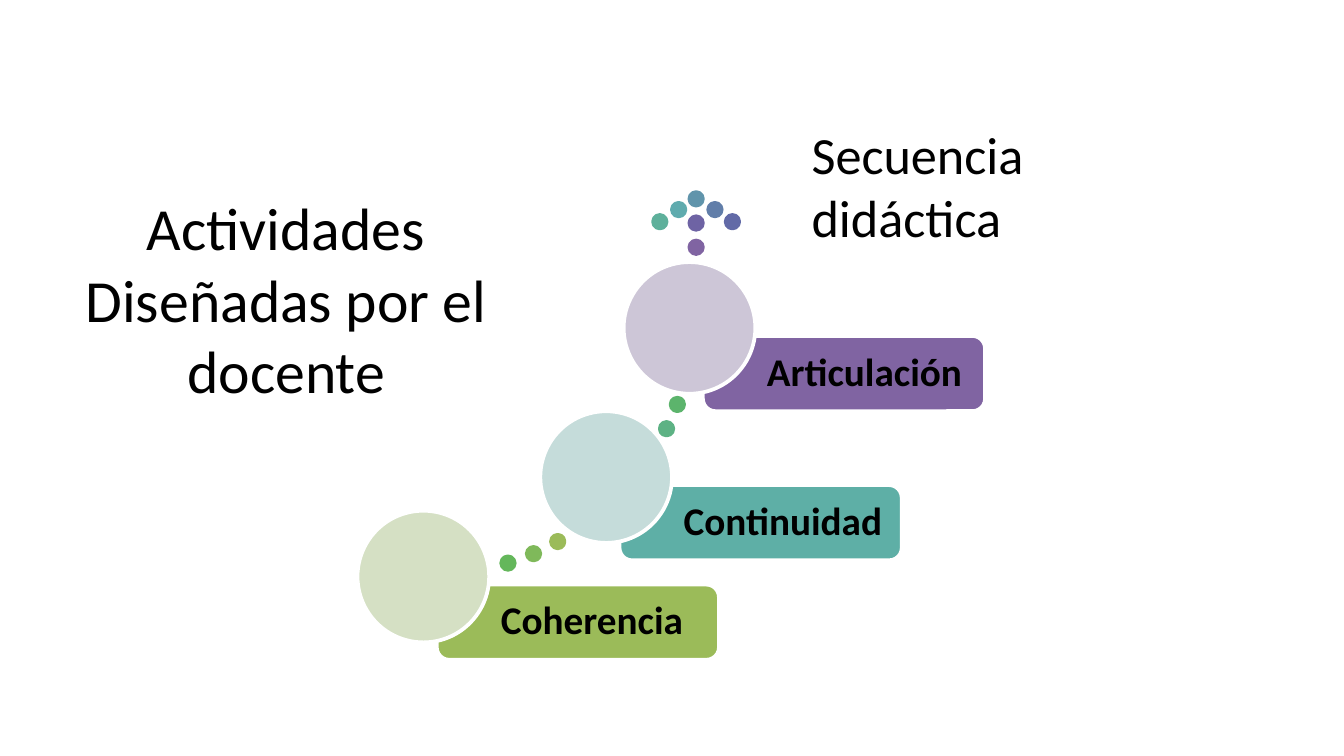
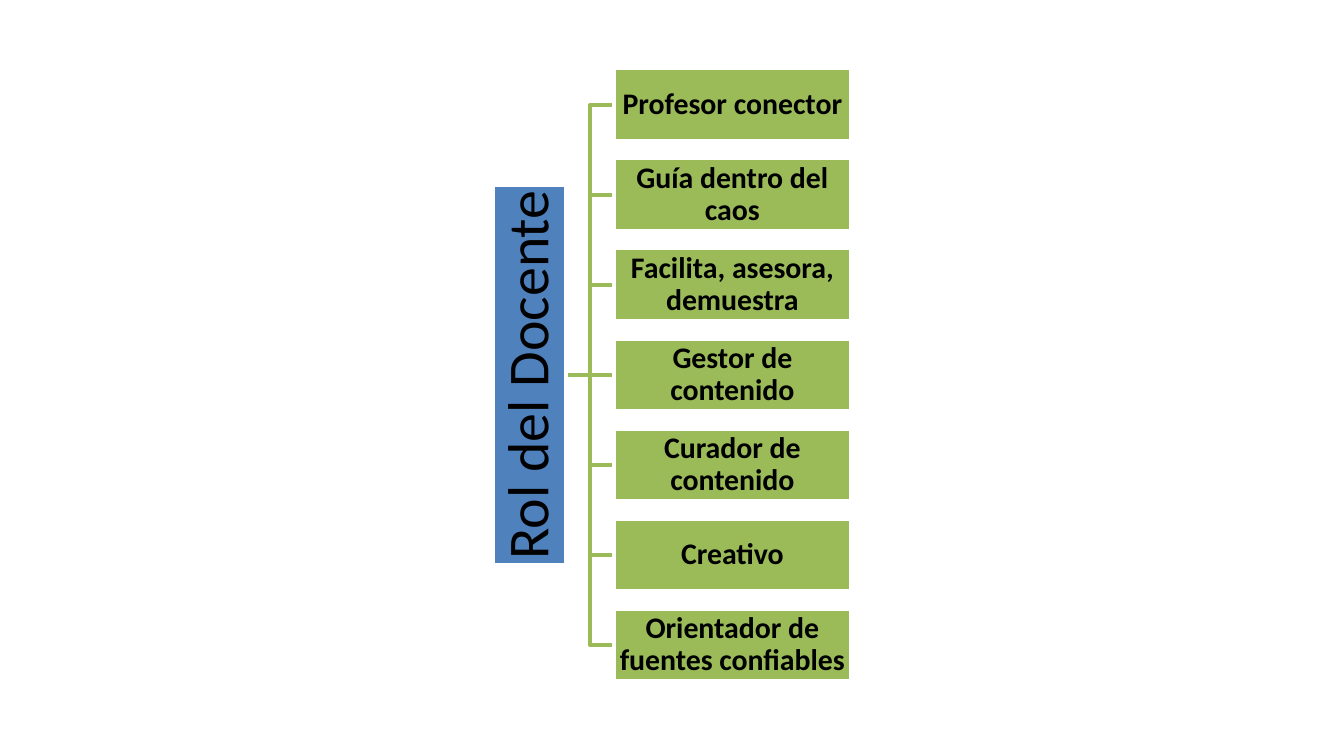
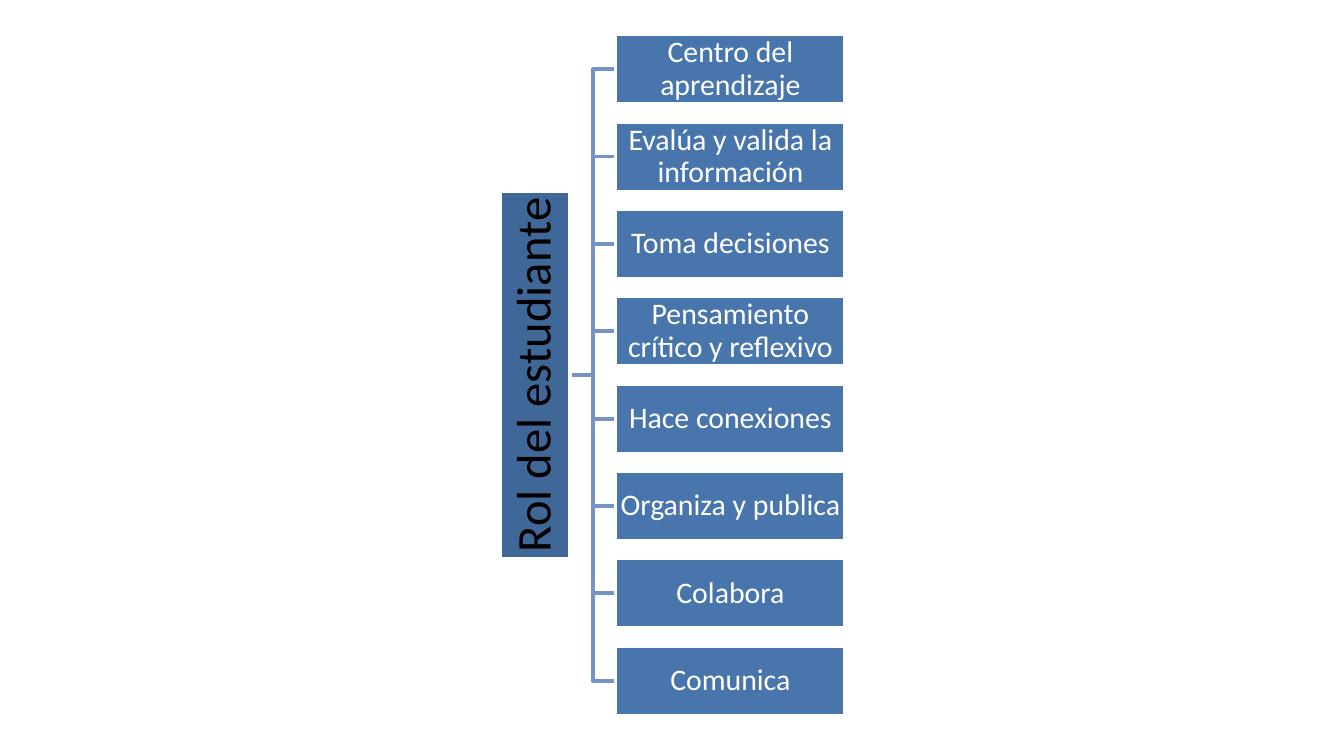
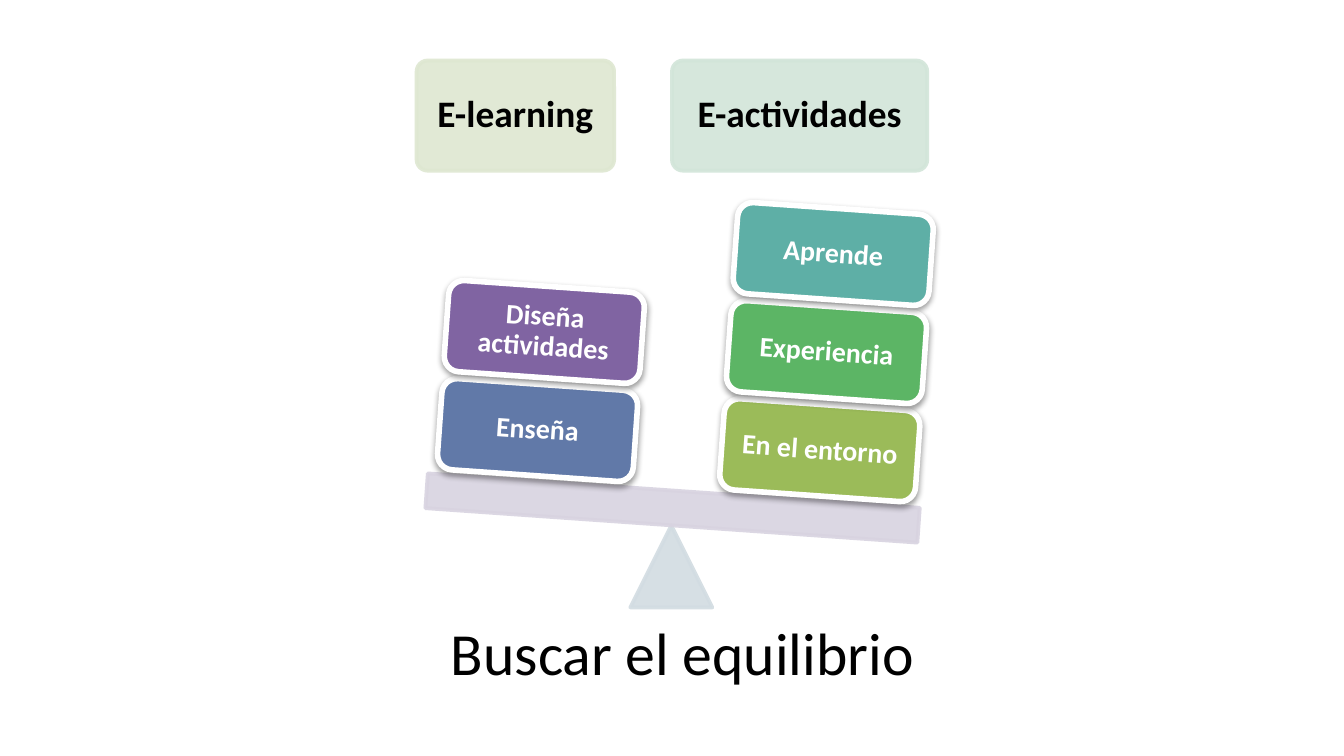
"""Build four slides on teaching sequences, roles and balance in e-learning."""
from lxml import etree
from pptx import Presentation
from pptx.dml.color import RGBColor
from pptx.enum.shapes import MSO_CONNECTOR, MSO_SHAPE as Shape
from pptx.enum.text import MSO_ANCHOR as Anchor, MSO_AUTO_SIZE as AutoSize, PP_ALIGN as Align
from pptx.oxml.ns import qn
from pptx.util import Inches, Pt

FONT = "Calibri"
BLACK, WHITE = "000000", "FFFFFF"
GREEN, TEAL, PURPLE = "9BBB59", "5EAFA6", "8064A2"
AXIS = 2.79
TILT = 4

STEPS = [
    ("Coherencia", 3.25, 4.35, GREEN, "D5E0C4"),
    ("Continuidad", 4.61, 3.61, TEAL, "C5DCDA"),
    ("Articulación", 5.23, 2.5, PURPLE, "CDC6D7"),
]
TRAIL = [
    (4.1, 3.98, GREEN), (3.92, 4.07, "7FB95A"), (3.73, 4.14, "64B75B"),
    (4.99, 2.96, "5CB46C"), (4.91, 3.14, "5DB284"), (4.86, 1.6, "5EB09B"),
    (5, 1.51, "5FABAE"), (5.13, 1.43, "6094AB"), (5.27, 1.51, "617EA9"),
    (5.4, 1.6, "626AA7"), (5.13, 1.61, "6E63A4"), (5.13, 1.79, PURPLE),
]
TEACHER_ROLES = [
    "Profesor conector", "Guía dentro del caos", "Facilita, asesora, demuestra",
    "Gestor de contenido", "Curador de contenido", "Creativo",
    "Orientador de fuentes confiables",
]
STUDENT_ROLES = [
    "Centro del aprendizaje", "Evalúa y valida la información", "Toma decisiones",
    "Pensamiento crítico y reflexivo", "Hace conexiones", "Organiza y publica",
    "Colabora", "Comunica",
]


def rgb(value):
    return RGBColor.from_string(value)


def inches(*values):
    return [Inches(value) for value in values]


def write(frame, text, size, color=BLACK, bold=False, align=Align.CENTER, spacing=None):
    frame.word_wrap = True
    frame.text = text
    paragraph = frame.paragraphs[0]
    paragraph.alignment = align
    if spacing:
        paragraph.line_spacing = spacing
    font = paragraph.font
    font.name, font.size, font.bold = FONT, Pt(size), bold
    font.color.rgb = rgb(color)


def set_outline(item, color, width=2):
    item.line.color.rgb = rgb(color)
    item.line.width = Pt(width)


def add_figure(slide, kind, box, fill, line=WHITE, width=2, rotation=0):
    figure = slide.shapes.add_shape(kind, *inches(*box))
    figure.shadow.inherit = False
    figure.fill.solid()
    figure.fill.fore_color.rgb = rgb(fill)
    set_outline(figure, line, width)
    figure.rotation = rotation
    return figure


def label(figure, text, size, margin, left=None, **style):
    frame = figure.text_frame
    frame.vertical_anchor = Anchor.MIDDLE
    frame.margin_right = frame.margin_top = frame.margin_bottom = Inches(margin)
    frame.margin_left = Inches(margin if left is None else left)
    write(frame, text, size, spacing=0.9, **style)


def add_caption(slide, box, text, size, align):
    caption = slide.shapes.add_textbox(*inches(*box))
    write(caption.text_frame, text, size, align=align)
    caption.text_frame.auto_size = AutoSize.SHAPE_TO_FIT_TEXT


def make_translucent(figure, percent=90):
    for color in figure._element.spPr.iter(qn("a:srgbClr")):
        etree.SubElement(color, qn("a:alpha"), val=str(percent * 1000))


def cast_shadow(figure):
    effects = figure._element.spPr.find(qn("a:effectLst"))
    shadow = etree.SubElement(effects, qn("a:outerShdw"), blurRad="40000", dist="20000",
                              dir="5400000", rotWithShape="0")
    color = etree.SubElement(shadow, qn("a:srgbClr"), val=BLACK)
    etree.SubElement(color, qn("a:alpha"), val="38000")


def add_straight_link(slide, start, end, color):
    link = slide.shapes.add_connector(MSO_CONNECTOR.STRAIGHT,
                                      *inches(start, AXIS, end, AXIS))
    set_outline(link, color)
    etree.SubElement(link._element.spPr, qn("a:effectLst"))
    return link


def add_bent_link(slide, start, end, row, color):
    middle = (start + end) / 2
    builder = slide.shapes.build_freeform(*inches(start, AXIS), scale=1.0)
    corners = [(middle, AXIS), (middle, row), (end, row)]
    builder.add_line_segments([inches(*corner) for corner in corners], close=False)
    link = builder.convert_to_shape()
    link.shadow.inherit = False
    link.fill.background()
    set_outline(link, color)


def add_role_tree(slide, root, root_size, root_fill, root_length, roles, role_fill,
                  link_color, start, end, width, height, pitch, **style):
    rows = [AXIS + (i - (len(roles) - 1) / 2) * pitch for i in range(len(roles))]
    straight_link = None
    for row in reversed(rows):
        if row == AXIS:
            straight_link = add_straight_link(slide, start, end, link_color)
        else:
            add_bent_link(slide, start, end, row, link_color)

    root_box = (start - (height + root_length) / 2, AXIS - height / 2, root_length, height)
    trunk = add_figure(slide, Shape.RECTANGLE, root_box, root_fill, rotation=270)
    label(trunk, root, root_size, 0.02)
    for role, row in zip(roles, rows):
        leaf = add_figure(slide, Shape.RECTANGLE, (end, row - height / 2, width, height),
                          role_fill)
        label(leaf, role, 16, 0.01, **style)
        if row == AXIS:
            straight_link.end_connect(leaf, 1)


def add_stack(slide, left, bottom, blocks):
    for level, (text, fill) in enumerate(blocks):
        box = (left + 0.05 * level, bottom - 0.73 * level, 1.46, 0.68)
        block = add_figure(slide, Shape.ROUNDED_RECTANGLE, box, fill, width=3, rotation=TILT)
        cast_shadow(block)
        label(block, text, 15, 0.06, color=WHITE, bold=True)


def build_sequence(slide):
    title = slide.shapes.title
    title.left, title.top, title.width, title.height = inches(0.35, 1.75, 3.56, 0.94)
    write(title.text_frame, "Actividades\vDiseñadas por el docente", 32)
    title.text_frame.vertical_anchor = Anchor.MIDDLE
    title.text_frame.auto_size = AutoSize.NONE
    for left, top, color in TRAIL:
        add_figure(slide, Shape.OVAL, (left, top, 0.1, 0.1), color, color)
    for name, left, top, fill, tint in STEPS:
        bar = add_figure(slide, Shape.ROUNDED_RECTANGLE, (left, top, 2.1, 0.56), fill)
        label(bar, name, 21, 0.09, left=0.45, bold=True, align=Align.LEFT)
        add_figure(slide, Shape.OVAL, (left - 0.59, top - 0.55, 0.98, 0.98), tint)
    add_caption(slide, (5.94, 0.86, 2.89, 1.04), "Secuencia didáctica", 28, Align.LEFT)


def build_balance(slide):
    for text, left, width, fill in [("E-learning", 3.1, 1.47, "DEE7D1"),
                                    ("E-actividades", 5, 1.9, "D2E5D9")]:
        heading = add_figure(slide, Shape.ROUNDED_RECTANGLE, (left, 0.45, width, 0.82),
                             fill, fill)
        heading.adjustments[0] = 0.1
        make_translucent(heading)
        label(heading, text, 20, 0.08, bold=True)
    for kind, box, fill, rotation in [
        (Shape.ISOSCELES_TRIANGLE, (4.69, 3.91, 0.61, 0.61), "D2DCE2", 0),
        (Shape.RECTANGLE, (3.17, 3.65, 3.67, 0.26), "D8D3E0", TILT),
    ]:
        make_translucent(add_figure(slide, kind, box, fill, fill, rotation=rotation))
    add_stack(slide, 5.37, 3.01, [("En el entorno", GREEN), ("Experiencia", "5CB565"),
                                  ("Aprende", TEAL)])
    add_stack(slide, 3.27, 2.86, [("Enseña", "6179A8"), ("Diseña actividades", PURPLE)])
    add_caption(slide, (1.93, 4.53, 6.3, 0.64), "Buscar el equilibrio", 32, Align.CENTER)


def main():
    deck = Presentation()
    deck.slide_width = Inches(10)
    deck.slide_height = deck.slide_width * 9 // 16
    title_only, blank = deck.slide_layouts[5], deck.slide_layouts[6]
    build_sequence(deck.slides.add_slide(title_only))
    add_role_tree(deck.slides.add_slide(blank), "Rol del Docente", 31, "4F81BD", 2.82,
                  TEACHER_ROLES, GREEN, GREEN, start=4.21, end=4.57,
                  width=1.76, height=0.54, pitch=0.67, bold=True)
    add_role_tree(deck.slides.add_slide(blank), "Rol del estudiante", 26, "3F6797", 2.74,
                  STUDENT_ROLES, "4875AC", "7394C5", start=4.24, end=4.58,
                  width=1.71, height=0.52, pitch=0.65, color=WHITE)
    build_balance(deck.slides.add_slide(blank))
    deck.save("out.pptx")


if __name__ == "__main__":
    main()
